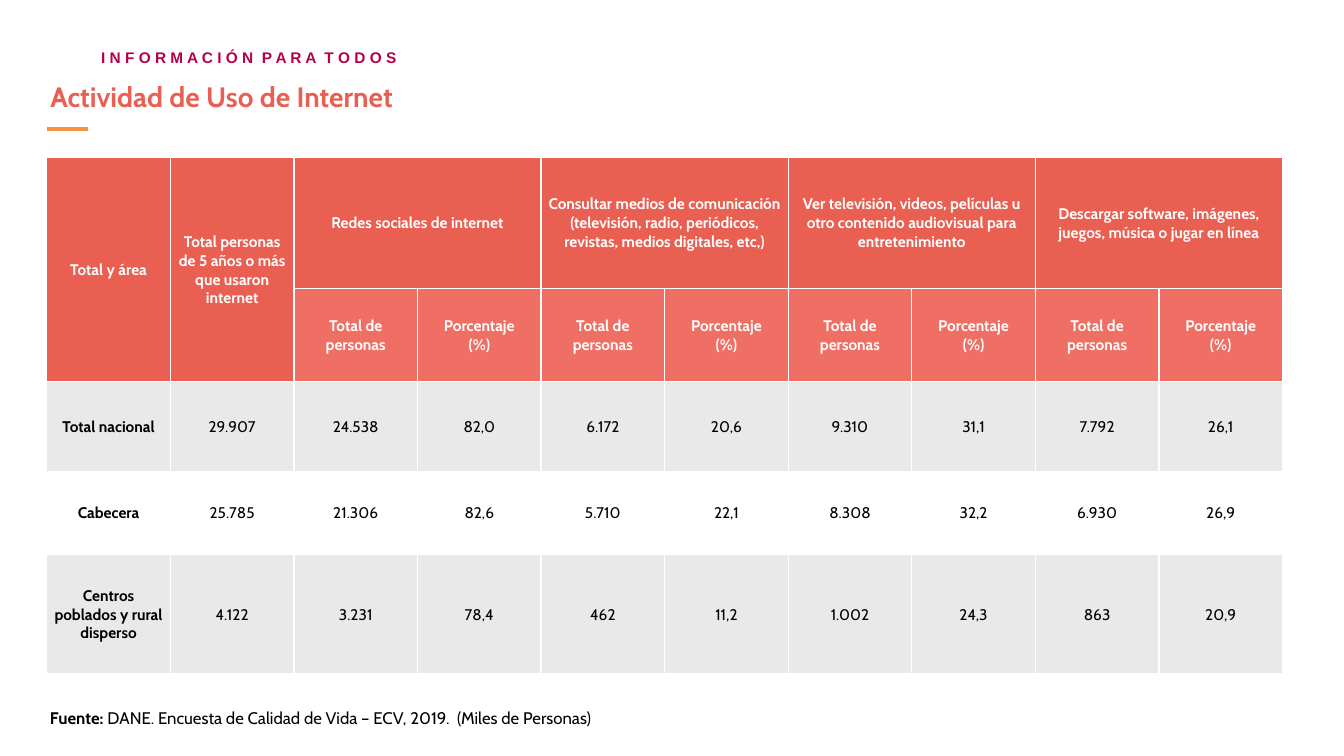
"""Build the slide with the table of internet use by activity and area."""
from lxml import etree
from pptx import Presentation
from pptx.dml.color import RGBColor
from pptx.enum import shapes, text
from pptx.oxml import ns
from pptx.util import Cm, Pt

CORAL, SALMON, GREY, WHITE, BLACK = "E96052", "EF6F64", "E9E9E9", "FFFFFF", "000000"
MAGENTA, ORANGE = "B6004C", "F69240"

BANNER = "I N F O R M A C I Ó N  P A R A  T O D O S"
TITLE = "Actividad de Uso de Internet"
SOURCE = ("Fuente: ", "DANE. Encuesta de Calidad de Vida – ECV, 2019.  (Miles de Personas)")
ROW_TITLES = ["Total y área", "Total personas de 5 años o más que usaron internet"]
ACTIVITIES = [
    "Redes sociales de internet",
    "Consultar medios de comunicación (televisión, radio, periódicos, revistas, "
    "medios digitales, etc,)",
    "Ver televisión, videos, películas u otro contenido audiovisual para entretenimiento",
    "Descargar software, imágenes, juegos, música o jugar en línea",
]
MEASURES = ["Total de personas", "Porcentaje\n(%)"]
AREAS = [
    ("Total nacional", "29.907", "24.538", "82,0", "6.172", "20,6",
     "9.310", "31,1", "7.792", "26,1"),
    ("Cabecera", "25.785", "21.306", "82,6", "5.710", "22,1",
     "8.308", "32,2", "6.930", "26,9"),
    ("Centros poblados y rural disperso", "4.122", "3.231", "78,4", "462", "11,2",
     "1.002", "24,3", "863", "20,9"),
]
ROW_HEIGHTS = [3.3, 2.36, 2.26, 2.08, 3.02]
TABLE_LEFT, TABLE_TOP, TABLE_WIDTH = 1.18, 3.96, 31.14
COLUMN_COUNT = len(AREAS[0])
CELL_FORMAT = {"margin_left": Cm(0.1), "margin_right": Cm(0.1), "margin_top": Cm(0.03),
               "margin_bottom": 0, "vertical_anchor": text.MSO_ANCHOR.MIDDLE}


def color(value):
    return RGBColor.from_string(value)


def apply(target, values):
    for name, value in values.items():
        setattr(target, name, value)


def format_font(font, size, value, bold, name="Cabin"):
    apply(font, {"size": Pt(size), "bold": bold, "name": name})
    font.color.rgb = color(value)


def format_frame(frame, left=0, top=0):
    apply(frame, {"margin_left": Cm(left), "margin_right": Cm(left), "margin_top": Cm(top),
                  "margin_bottom": Cm(top), "word_wrap": True,
                  "auto_size": text.MSO_AUTO_SIZE.NONE,
                  "vertical_anchor": text.MSO_ANCHOR.TOP})
    return frame.paragraphs[0]


def add_borders(cell):
    properties = cell._tc.get_or_add_tcPr()
    for position, side in enumerate(("lnL", "lnR", "lnT", "lnB")):
        line = etree.Element(ns.qn("a:" + side), w=str(Pt(1)))
        fill = etree.SubElement(line, ns.qn("a:solidFill"))
        etree.SubElement(fill, ns.qn("a:srgbClr"), val=WHITE)
        properties.insert(position, line)


def fill_cell(cell, words, fill, font_color, bold):
    apply(cell, CELL_FORMAT)
    cell.text = words
    for paragraph in cell.text_frame.paragraphs:
        paragraph.alignment = text.PP_ALIGN.CENTER
        format_font(paragraph.font, 11, font_color, bold)
    if fill:
        cell.fill.solid()
        cell.fill.fore_color.rgb = color(fill)
    else:
        cell.fill.background()
    add_borders(cell)


def add_table(slide):
    top_header = ROW_TITLES + [words for name in ACTIVITIES for words in (name, "")]
    sub_header = [""] * len(ROW_TITLES) + MEASURES * len(ACTIVITIES)
    rows = [top_header, sub_header, *AREAS]
    fills = [CORAL, SALMON, GREY, None, GREY]
    table = slide.shapes.add_table(
        len(rows), COLUMN_COUNT, Cm(TABLE_LEFT), Cm(TABLE_TOP),
        Cm(TABLE_WIDTH), Cm(sum(ROW_HEIGHTS))).table
    apply(table, {"first_row": False, "horz_banding": False})
    for column in table.columns:
        column.width = Cm(TABLE_WIDTH / COLUMN_COUNT)
    for r, (row, fill, height) in enumerate(zip(rows, fills, ROW_HEIGHTS)):
        table.rows[r].height = Cm(height)
        header = r < 2
        for c, words in enumerate(row):
            fill_cell(table.cell(r, c), words, fill, WHITE if header else BLACK,
                      header or c == 0)
    for c in range(len(ROW_TITLES)):
        table.cell(0, c).merge(table.cell(1, c))
    for c in range(len(ROW_TITLES), COLUMN_COUNT, len(MEASURES)):
        table.cell(0, c).merge(table.cell(0, c + 1))


def add_heading(slide):
    banner = slide.shapes.add_textbox(Cm(2.55), Cm(1.02), Cm(10.41), Cm(0.64))
    paragraph = format_frame(banner.text_frame, top=0.05)
    paragraph.text = BANNER
    paragraph.line_spacing = 1.3
    format_font(paragraph.font, 11, MAGENTA, True, "Arial")

    title = slide.shapes.title
    apply(title, {"left": Cm(1.27), "top": Cm(2.01), "width": Cm(18.31), "height": Cm(0.86)})
    paragraph = format_frame(title.text_frame)
    paragraph.text = TITLE
    paragraph.alignment = text.PP_ALIGN.LEFT
    format_font(paragraph.font, 20, CORAL, True)

    accent = slide.shapes.add_connector(
        shapes.MSO_CONNECTOR.STRAIGHT, Cm(1.19), Cm(3.25), Cm(2.21), Cm(3.25))
    accent.line.color.rgb = color(ORANGE)
    accent.line.width = Pt(2.25)
    etree.SubElement(accent._element.spPr, ns.qn("a:effectLst"))


def add_source(slide):
    source = slide.shapes.add_textbox(Cm(0.93), Cm(17.65), Cm(15.72), Cm(0.86))
    paragraph = format_frame(source.text_frame, 0.33, 0.18)
    for words, bold in zip(SOURCE, (True, False)):
        run = paragraph.add_run()
        run.text = words
        format_font(run.font, 12, BLACK, bold)


def main():
    presentation = Presentation()
    apply(presentation, {"slide_width": Cm(33.87), "slide_height": Cm(19.05)})
    slide = presentation.slides.add_slide(presentation.slide_layouts[5])
    add_heading(slide)
    add_source(slide)
    add_table(slide)
    presentation.save("out.pptx")


if __name__ == "__main__":
    main()
